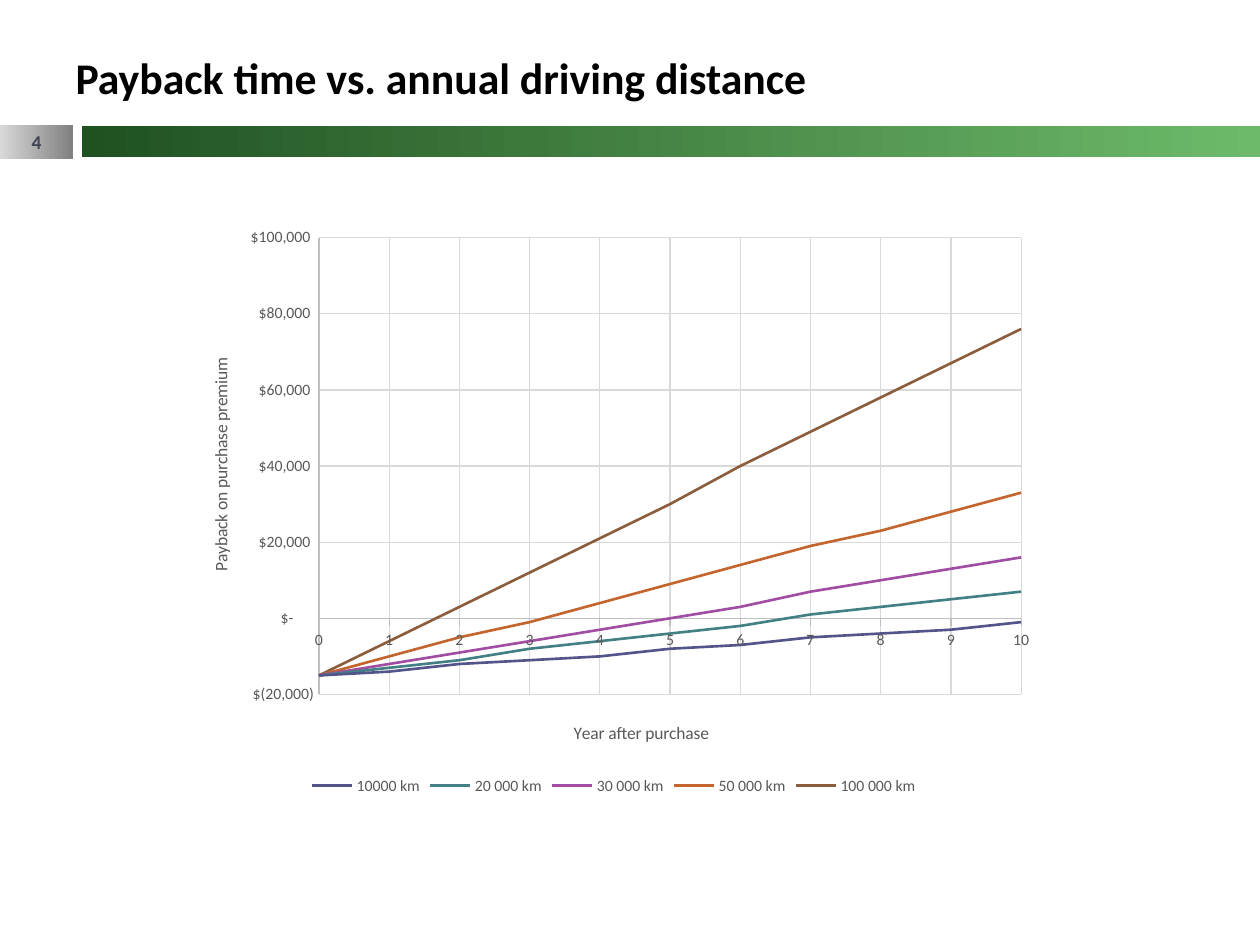
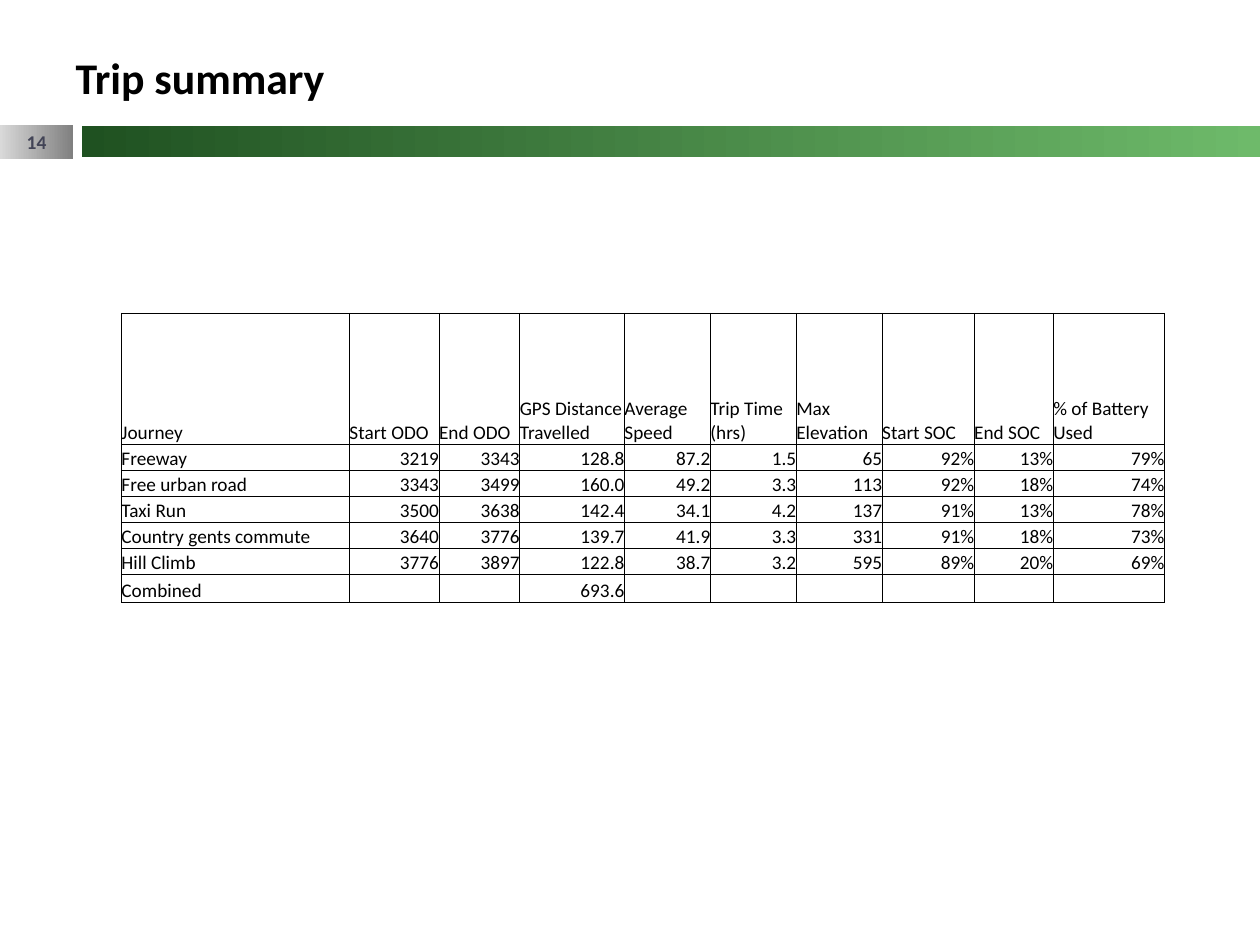
"""Build the payback chart and trip summary slides."""
from dataclasses import dataclass
from typing import Any

from lxml.etree import SubElement
from pptx import Presentation
from pptx.chart.data import XyChartData
from pptx.dml.color import RGBColor as RGB
from pptx.enum.chart import XL_CHART_TYPE as ChartType
from pptx.enum.chart import XL_LEGEND_POSITION as LegendPos
from pptx.enum.chart import XL_TICK_MARK as Tick
from pptx.enum.shapes import MSO_SHAPE as Shape
from pptx.enum.text import MSO_ANCHOR as Anchor
from pptx.enum.text import MSO_AUTO_SIZE as AutoSize
from pptx.enum.text import PP_ALIGN as Align
from pptx.oxml import parse_xml
from pptx.oxml.ns import nsdecls, qn
from pptx.util import Pt


@dataclass(frozen=True)
class Theme:
    """Colours, font and type sizes of the deck."""
    font: str = "Calibri"
    ink: str = "000000"
    number: str = "424456"
    muted: str = "595959"
    axis: str = "BFBFBF"
    grid: str = "D9D9D9"
    green: tuple[str, str] = ("1F5121", "6EBA6A")
    grey: tuple[str, str] = ("D9D9D9", "808080")
    title_size: float = 25
    number_size: float = 11.1
    table_size: float = 11
    axis_title_size: float = 10
    label_size: float = 9


@dataclass(frozen=True)
class Box:
    """Position and size in points."""
    left: float
    top: float
    width: float
    height: float

    def lengths(self) -> tuple[Pt, Pt, Pt, Pt]:
        """Return the four lengths."""
        return Pt(self.left), Pt(self.top), Pt(self.width), Pt(self.height)


@dataclass(frozen=True)
class Band:
    """A rectangle with a left-to-right gradient."""
    box: Box
    colours: tuple[str, str]


@dataclass(frozen=True)
class Distance:
    """One annual driving distance and its payback in thousands by year."""
    name: str
    colour: str
    payback: tuple[int, ...]


T = Theme()
TITLE_BOX = Box(36, 25.2, 568, 67.7)
GREEN_BAND = Band(Box(46.8, 72, 673.2, 18), T.green)
NUMBER_BAND = Band(Box(0, 71.3, 41.8, 19.4), T.grey)
CHART_BOX = Box(103, 122.4, 495.4, 334.8)
DOLLARS = r'_("$"* #,##0_);_("$"* \(#,##0\);_("$"* "-"??_);_(@_)'
DISTANCES = (
    Distance("10000 km", "53548A", (-15, -14, -12, -11, -10, -8, -7, -5, -4, -3, -1)),
    Distance("20 000 km", "438086", (-15, -13, -11, -8, -6, -4, -2, 1, 3, 5, 7)),
    Distance("30 000 km", "A04DA3", (-15, -12, -9, -6, -3, 0, 3, 7, 10, 13, 16)),
    Distance("50 000 km", "C4652D", (-15, -10, -5, -1, 4, 9, 14, 19, 23, 28, 33)),
    Distance("100 000 km", "8B5D3D", (-15, -6, 3, 12, 21, 30, 40, 49, 58, 67, 76)),
)

TABLE_BOX = Box(69.4, 179, 596.2, 165.4)
COLUMNS = (130.3, 51.2, 46.2, 59.8, 49.1, 49.1, 49.1, 52.6, 45.2, 63.6)
ROWS = (74.9, *[14.9] * 5, 16)
TRIPS = (
    ("Journey", "Start ODO", "End ODO", "GPS Distance Travelled", "Average Speed",
     "Trip Time (hrs)", "Max Elevation", "Start SOC", "End SOC", "% of Battery Used"),
    ("Freeway", "3219", "3343", "128.8", "87.2", "1.5", "65", "92%", "13%", "79%"),
    ("Free urban road", "3343", "3499", "160.0", "49.2", "3.3", "113", "92%", "18%", "74%"),
    ("Taxi Run", "3500", "3638", "142.4", "34.1", "4.2", "137", "91%", "13%", "78%"),
    ("Country gents commute", "3640", "3776", "139.7", "41.9", "3.3", "331", "91%", "18%", "73%"),
    ("Hill Climb", "3776", "3897", "122.8", "38.7", "3.2", "595", "89%", "20%", "69%"),
    ("Combined", "", "", "693.6", "", "", "", "", "", ""),
)
NO_MARGINS = dict.fromkeys(("margin_left", "margin_top", "margin_right", "margin_bottom"), 0)


def assign(obj: Any, values: dict[str, Any]) -> None:
    """Set each named attribute."""
    for name, value in values.items():
        setattr(obj, name, value)


def style_font(font: Any, size: float, colour: str, bold: bool = False) -> None:
    """Apply the deck font."""
    assign(font, {"name": T.font, "size": Pt(size), "bold": bold})
    font.color.rgb = RGB.from_string(colour)


def style_line(line: Any, colour: str, width: float) -> None:
    """Give a line its colour and width."""
    line.color.rgb = RGB.from_string(colour)
    line.width = Pt(width)


def add_band(s: Any, band: Band) -> Any:
    """Draw a gradient band."""
    sp = s.shapes.add_shape(Shape.RECTANGLE, *band.box.lengths())
    sp.shadow.inherit = False
    sp.line.fill.background()
    sp.fill.gradient()
    sp.fill.gradient_angle = 0
    for stop, colour in zip(sp.fill.gradient_stops, band.colours):
        stop.color.rgb = RGB.from_string(colour)
    return sp


def add_slide(prs: Any, title: str, number: int) -> Any:
    """Add a slide with title, bands and page number."""
    s = prs.slides.add_slide(prs.slide_layouts[5])
    add_band(s, GREEN_BAND)
    tf = add_band(s, NUMBER_BAND).text_frame
    assign(tf, {**NO_MARGINS, "vertical_anchor": Anchor.MIDDLE})
    p = tf.paragraphs[0]
    p.alignment = Align.CENTER
    r = p.add_run()
    r.text = str(number)
    style_font(r.font, T.number_size, T.number, True)

    sp = s.shapes.title
    assign(sp, dict(zip(("left", "top", "width", "height"), TITLE_BOX.lengths())))
    tf = sp.text_frame
    assign(tf, {"vertical_anchor": Anchor.TOP, "word_wrap": True, "auto_size": AutoSize.NONE})
    p = tf.paragraphs[0]
    p.alignment = Align.LEFT
    r = p.add_run()
    r.text = title
    style_font(r.font, T.title_size, T.ink, True)
    return s


def set_layout(parent: Any, index: int, **places: float) -> None:
    """Place a chart part by fractions of the chart area."""
    old = parent.find(qn("c:layout"))
    if old is not None:
        parent.remove(old)
    layout = parse_xml(f"<c:layout {nsdecls('c')}><c:manualLayout/></c:layout>")
    manual = layout[0]
    if "w" in places:
        SubElement(manual, qn("c:layoutTarget")).set("val", "inner")
    for mode in ("xMode", "yMode"):
        SubElement(manual, qn(f"c:{mode}")).set("val", "edge")
    for name, value in places.items():
        SubElement(manual, qn(f"c:{name}")).set("val", str(value))
    parent.insert(index, layout)


def style_axis(axis: Any, title: str, rotation: int, x: float, y: float,
               values: dict[str, Any]) -> None:
    """Format an axis, its gridlines and its title."""
    assign(axis, {"has_major_gridlines": True, "minor_tick_mark": Tick.NONE, **values})
    style_line(axis.format.line, T.axis, 0.75)
    style_line(axis.major_gridlines.format.line, T.grid, 0.75)
    style_font(axis.tick_labels.font, T.label_size, T.muted)
    p = axis.axis_title.text_frame.paragraphs[0]
    r = p.add_run()
    r.text = title
    style_font(r.font, T.axis_title_size, T.muted)
    element = axis.axis_title._element
    element.find(f".//{qn('a:bodyPr')}").set("rot", str(rotation))
    set_layout(element, 1, x=x, y=y)


def add_payback_chart(s: Any) -> None:
    """Draw payback by year for each driving distance."""
    data = XyChartData()
    for distance in DISTANCES:
        series = data.add_series(distance.name)
        for year, thousands in enumerate(distance.payback):
            series.add_data_point(year, thousands * 1000)
    chart = s.shapes.add_chart(
        ChartType.XY_SCATTER_LINES_NO_MARKERS, *CHART_BOX.lengths(), data).chart
    assign(chart, {"has_title": False, "has_legend": True})
    style_font(chart.font, T.axis_title_size, T.ink)
    assign(chart.legend, {"position": LegendPos.BOTTOM, "include_in_layout": False})
    style_font(chart.legend.font, T.label_size, T.muted)
    plot = chart.plots[0]
    plot.vary_by_categories = False
    for series, distance in zip(plot.series, DISTANCES):
        series.smooth = False
        style_line(series.format.line, distance.colour, 1.5)
    style_axis(chart.category_axis, "Year after purchase", 0, 0.45, 0.86, {
        "minimum_scale": 0, "maximum_scale": 10, "major_unit": 1,
        "major_tick_mark": Tick.OUTSIDE})
    style_axis(chart.value_axis, "Payback on purchase premium", -5400000, 0.03, 0.24, {
        "minimum_scale": -20000, "maximum_scale": 100000, "major_unit": 20000,
        "major_tick_mark": Tick.NONE})
    assign(chart.value_axis.tick_labels,
           {"number_format": DOLLARS, "number_format_is_linked": False})
    set_layout(chart._chartSpace.chart.plotArea, 0, x=0.16, y=0.04, w=0.81, h=0.78)


def add_borders(cell: Any) -> None:
    """Draw a thin line on each side of a cell."""
    for i, side in enumerate("LRTB"):
        cell._tc.get_or_add_tcPr().insert(i, parse_xml(
            f'<a:ln{side} {nsdecls("a")} w="{Pt(0.5)}"><a:solidFill>'
            f'<a:srgbClr val="{T.ink}"/></a:solidFill></a:ln{side}>'))


def add_trip_table(s: Any) -> None:
    """Draw the table of trips."""
    table = s.shapes.add_table(len(ROWS), len(COLUMNS), *TABLE_BOX.lengths()).table
    assign(table, {"first_row": False, "horz_banding": False})
    for column, width in zip(table.columns, COLUMNS):
        column.width = Pt(width)
    for row, height in zip(table.rows, ROWS):
        row.height = Pt(height)
    for i, trip in enumerate(TRIPS):
        for j, text in enumerate(trip):
            cell = table.cell(i, j)
            assign(cell, {**NO_MARGINS, "vertical_anchor": Anchor.BOTTOM})
            cell.fill.background()
            add_borders(cell)
            p = cell.text_frame.paragraphs[0]
            p.alignment = Align.RIGHT if i and j else Align.LEFT
            if text:
                r = p.add_run()
                r.text = text
                style_font(r.font, T.table_size, T.ink)
            else:
                SubElement(p._p, qn("a:endParaRPr")).set("sz", str(T.table_size * 100))


def main() -> None:
    """Build and save the deck."""
    prs = Presentation()
    assign(prs, {"slide_width": Pt(720), "slide_height": Pt(540)})
    add_payback_chart(add_slide(prs, "Payback time vs. annual driving distance", 4))
    add_trip_table(add_slide(prs, "Trip summary", 14))
    prs.save("out.pptx")


if __name__ == "__main__":
    main()
